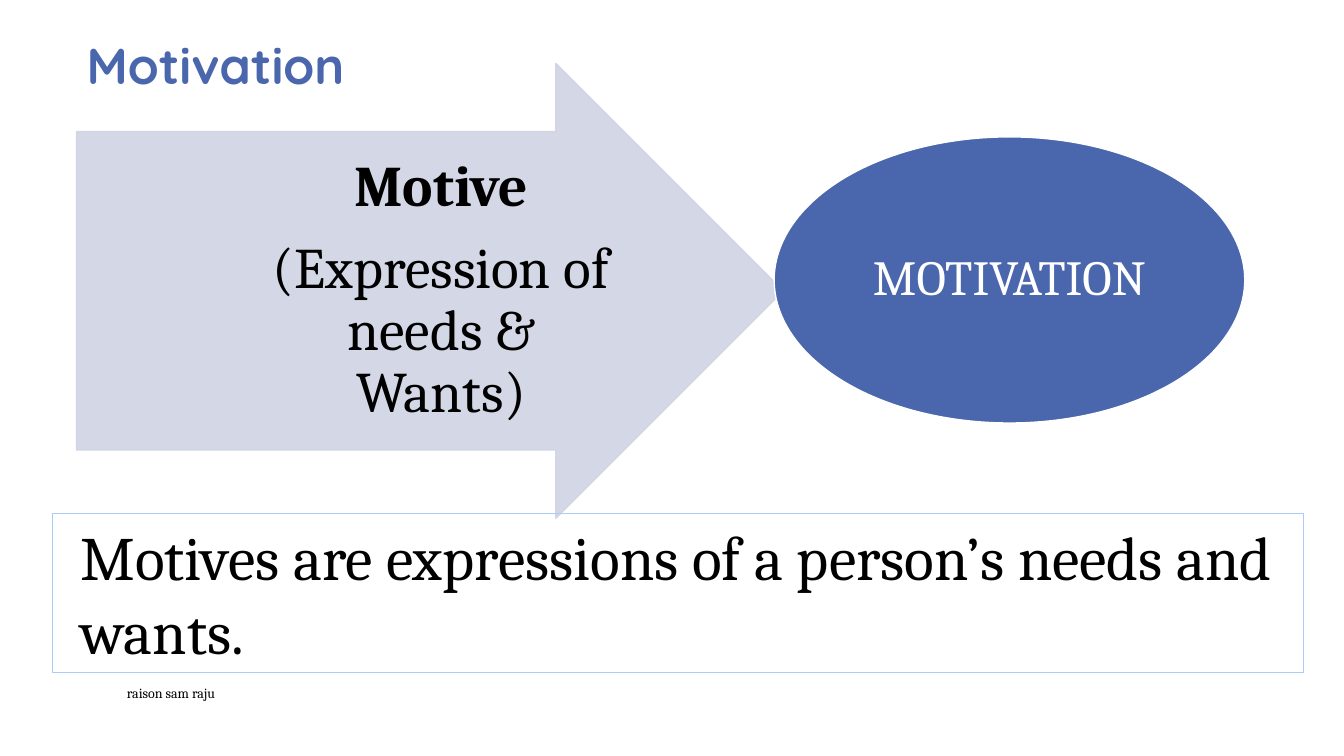
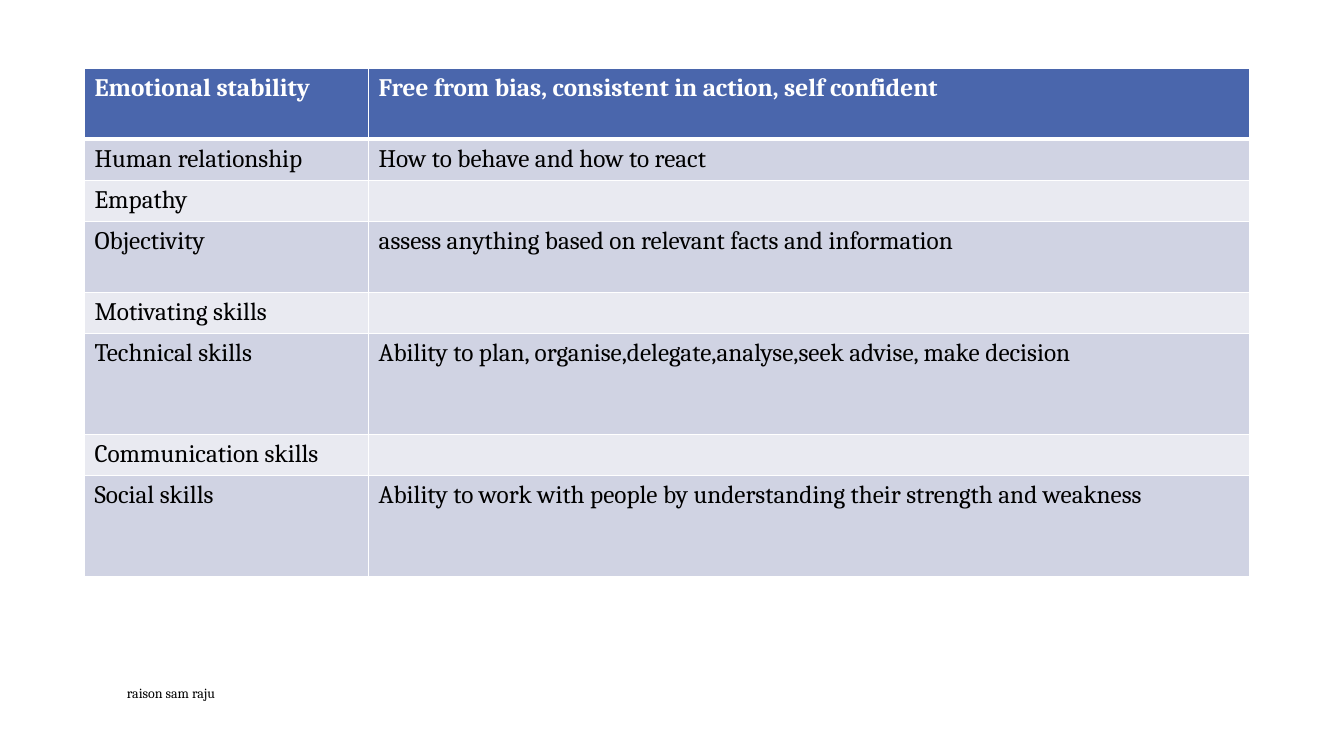
"""Build two slides: how motives lead to motivation, and a table of personal skills."""
from lxml import etree
from pptx import Presentation
from pptx.dml.color import RGBColor
from pptx.enum.shapes import MSO_SHAPE
from pptx.enum.text import MSO_ANCHOR, MSO_AUTO_SIZE, PP_ALIGN
from pptx.oxml.ns import qn
from pptx.util import Cm, Pt

ARROW, OVAL, RECT = MSO_SHAPE.RIGHT_ARROW, MSO_SHAPE.OVAL, MSO_SHAPE.RECTANGLE
LEFT, CENTER = PP_ALIGN.LEFT, PP_ALIGN.CENTER
MIDDLE, BOTTOM = MSO_ANCHOR.MIDDLE, MSO_ANCHOR.BOTTOM
NO_AUTOFIT = MSO_AUTO_SIZE.NONE

COLORS = {"blue": "4A66AC", "band": "D0D3E3", "light": "E9EAF1",
          "frame": "ACCBF9", "white": "FFFFFF", "black": "000000"}
BODY_FONT, TITLE_FONT = "Cambria", "Quicksand"

TITLE = "Motivation"
MOTIVE = ["Motive", "(Expression of needs & Wants)"]
RESULT = "MOTIVATION"
STATEMENT = "Motives are expressions of a person’s needs and wants."
FOOTER = "raison sam raju"

COLUMN_WIDTHS = (7.16, 22.2)
SKILLS = [
    ("Emotional stability", "Free from bias, consistent in action, self confident", 1.78),
    ("Human relationship", "How to behave and how to react", 1.04),
    ("Empathy", "", 1.04),
    ("Objectivity", "assess anything based on relevant facts and information", 1.78),
    ("Motivating skills", "", 1.04),
    ("Technical skills",
     "Ability to plan, organise,delegate,analyse,seek advise, make decision", 2.54),
    ("Communication skills", "", 1.04),
    ("Social skills",
     "Ability to work with people by understanding their strength and weakness", 2.54),
]


def rgb(name):
    return RGBColor.from_string(COLORS[name])


def style(paragraph, size, color="black", bold=False, font=BODY_FONT, align=LEFT, spacing=None):
    paragraph.alignment = align
    if spacing:
        paragraph.line_spacing = spacing
    paragraph.font.name = font
    paragraph.font.size = Pt(size)
    paragraph.font.bold = bold
    paragraph.font.color.rgb = rgb(color)


def set_frame(frame, anchor=MIDDLE, margins=None):
    frame.word_wrap = True
    frame.auto_size = NO_AUTOFIT
    frame.vertical_anchor = anchor
    if margins:
        frame.margin_left, frame.margin_top, frame.margin_right, frame.margin_bottom = map(Cm, margins)


def add_box(slide, place, **frame_options):
    frame = slide.shapes.add_textbox(*map(Cm, place)).text_frame
    set_frame(frame, **frame_options)
    return frame


def add_figure(slide, preset, place, fill, line, width):
    figure = slide.shapes.add_shape(preset, *map(Cm, place))
    figure.shadow.inherit = False
    if fill:
        figure.fill.solid()
        figure.fill.fore_color.rgb = rgb(fill)
    else:
        figure.fill.background()
    figure.line.color.rgb = rgb(line)
    figure.line.width = Pt(width)
    return figure


def set_opacity(figure, percent):
    for color in figure.element.spPr.iter(qn("a:srgbClr")):
        etree.SubElement(color, qn("a:alpha")).set("val", str(percent * 1000))


def set_borders(cell, top, bottom):
    properties = cell._tc.get_or_add_tcPr()
    for side, width in (("L", 1), ("R", 1), ("T", top), ("B", bottom)):
        border = etree.SubElement(properties, qn(f"a:ln{side}"), w=str(Pt(width)))
        fill = etree.SubElement(border, qn("a:solidFill"))
        etree.SubElement(fill, qn("a:srgbClr"), val=COLORS["white"])


def add_footer(slide):
    footer = add_box(slide, (2.95, 17.09, 15.7, 0.76))
    footer.text = FOOTER
    style(footer.paragraphs[0], 10)


def build_motivation(slide):
    title = slide.shapes.title
    title.left, title.top, title.width, title.height = map(Cm, (1.93, 0.74, 24.13, 1.75))
    title.text = TITLE
    set_frame(title.text_frame, BOTTOM)
    style(title.text_frame.paragraphs[0], 36, "blue", True, TITLE_FONT, spacing=0.8)

    arrow = add_figure(slide, ARROW, (1.93, 1.6, 17.81, 11.46), "band", "band", 1)
    arrow.adjustments[0], arrow.adjustments[1] = 0.7, 0.5
    set_opacity(arrow, 90)

    motive = add_box(slide, (6.38, 3.33, 9.35, 8), margins=(0.28, 0.08, 0.15, 0.08))
    motive.text = "\n".join(MOTIVE)
    heading, meaning = motive.paragraphs
    style(heading, 41, bold=True, align=CENTER, spacing=0.9)
    style(meaning, 41, align=CENTER, spacing=0.9)
    heading.space_after = Pt(14.5)

    result = add_figure(slide, OVAL, (19.51, 3.45, 11.86, 7.21), "blue", "white", 1).text_frame
    set_frame(result, margins=(0.05,) * 4)
    result.text = RESULT
    style(result.paragraphs[0], 35, "white", align=CENTER, spacing=0.9)

    statement = add_figure(slide, RECT, (1.32, 12.93, 31.52, 4.01), None, "frame", 0.75).text_frame
    set_frame(statement, margins=(0.71, 0.13, 0.25, 0.13))
    statement.text = STATEMENT
    style(statement.paragraphs[0], 44)


def build_skills(slide):
    heights = [height for *_, height in SKILLS]
    place = (2.13, 1.73, sum(COLUMN_WIDTHS), sum(heights))
    table = slide.shapes.add_table(len(SKILLS), len(COLUMN_WIDTHS), *map(Cm, place)).table
    for column, width in zip(table.columns, COLUMN_WIDTHS):
        column.width = Cm(width)
    for index, (*texts, height) in enumerate(SKILLS):
        table.rows[index].height = Cm(height)
        header = index == 0
        fill = "blue" if header else ("light", "band")[index % 2]
        for cell, text in zip(table.rows[index].cells, texts):
            set_borders(cell, top=3 if index == 1 else 1, bottom=3 if header else 1)
            cell.fill.solid()
            cell.fill.fore_color.rgb = rgb(fill)
            cell.text = text
            style(cell.text_frame.paragraphs[0], 18, "white" if header else "black", header)


def main():
    deck = Presentation()
    deck.slide_width, deck.slide_height = Cm(33.87), Cm(19.05)
    title_only, blank = deck.slide_layouts[5], deck.slide_layouts[6]
    for layout, build in ((title_only, build_motivation), (blank, build_skills)):
        slide = deck.slides.add_slide(layout)
        build(slide)
        add_footer(slide)
    deck.save("out.pptx")


if __name__ == "__main__":
    main()
